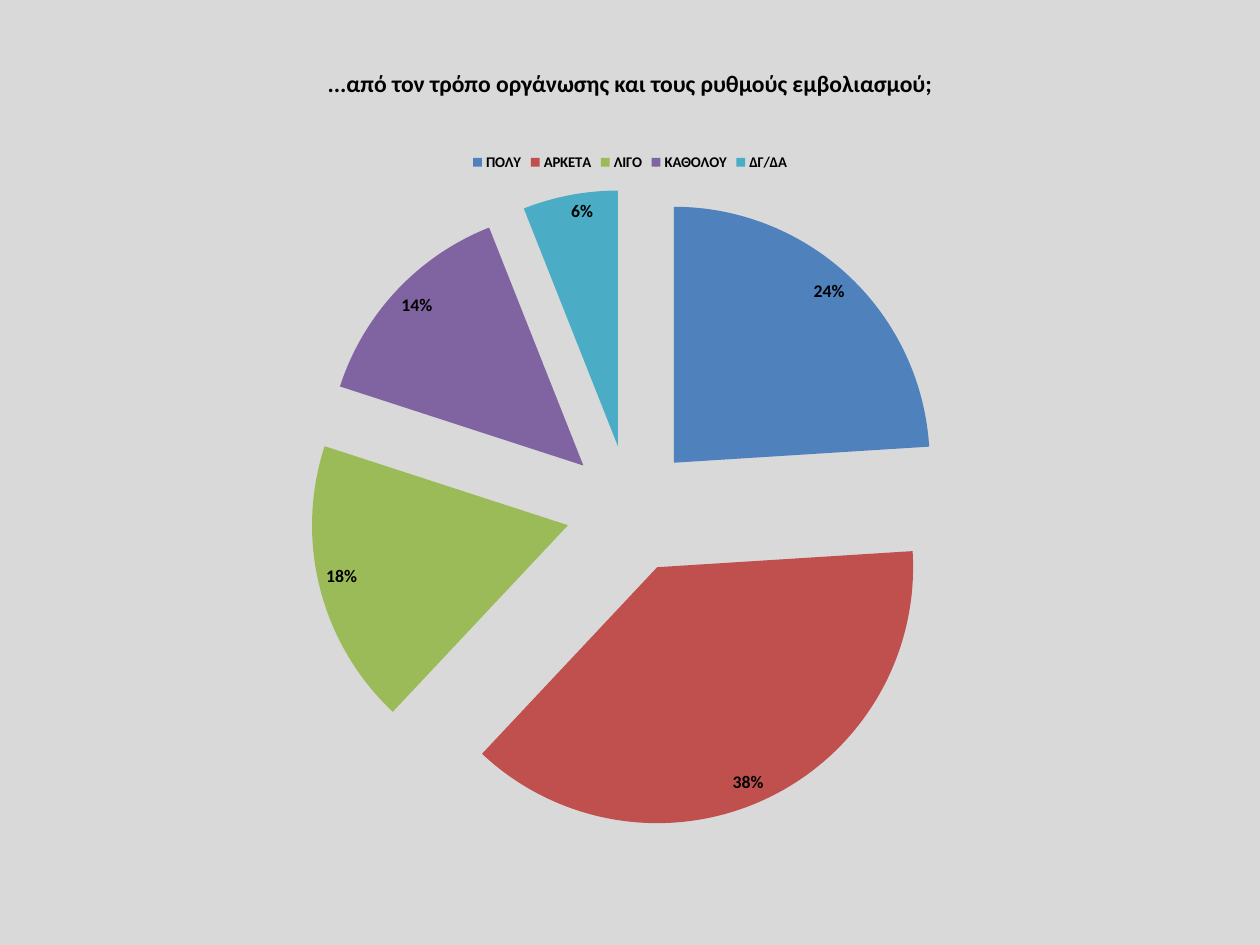
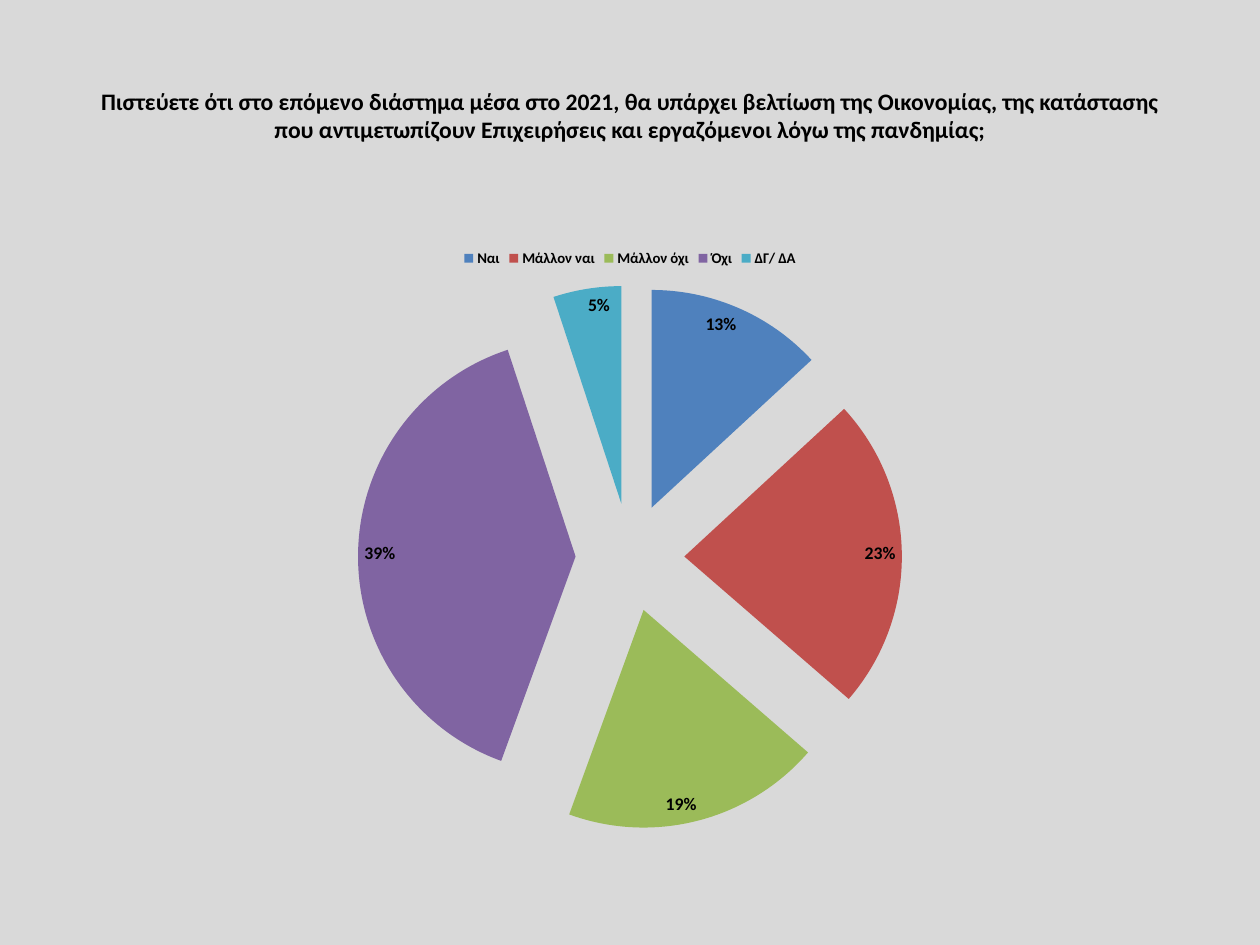
from pptx import Presentation
from pptx.chart.data import CategoryChartData
from pptx.dml.color import RGBColor
from pptx.enum.chart import XL_CHART_TYPE, XL_LABEL_POSITION, XL_LEGEND_POSITION
from pptx.enum.text import MSO_ANCHOR, PP_ALIGN
from pptx.oxml import parse_xml
from pptx.oxml.ns import nsdecls
from pptx.util import Emu, Pt

PIE = XL_CHART_TYPE.PIE
LEGEND_TOP = XL_LEGEND_POSITION.TOP
INSIDE_END = XL_LABEL_POSITION.INSIDE_END
MIDDLE = MSO_ANCHOR.MIDDLE
CENTER = PP_ALIGN.CENTER

EMU_PER_PX = 8594
SLIDE_WIDTH, SLIDE_HEIGHT = 1260, 945
TITLE_LEFT, TITLE_TOP = 86, 50
CHART_LEFT, CHART_BOTTOM = 63, 844
TITLE_CHART_GAP = 26

FONT = "Calibri"
BACKGROUND = "D9D9D9"
TEXT_COLOR = "000000"
SLICE_COLORS = ["4F81BD", "C0504D", "9BBB59", "8064A2", "4BACC6"]
EXPLOSION = 25

QUESTIONS = [
    {
        "title": "...από τον τρόπο οργάνωσης και τους ρυθμούς εμβολιασμού;",
        "title_height": 66,
        "answers": {"ΠΟΛΥ": 24, "ΑΡΚΕΤΑ": 38, "ΛΙΓΟ": 18, "ΚΑΘΟΛΟΥ": 14, "ΔΓ/ΔΑ": 6},
    },
    {
        "title": "Πιστεύετε ότι στο επόμενο διάστημα μέσα στο 2021, θα υπάρχει "
                 "βελτίωση της Οικονομίας, της κατάστασης που αντιμετωπίζουν "
                 "Επιχειρήσεις και εργαζόμενοι λόγω της πανδημίας;",
        "title_height": 130,
        "answers": {"Ναι": 13, "Μάλλον ναι": 23, "Μάλλον όχι": 19, "Όχι": 39, "ΔΓ/ ΔΑ": 5},
    },
]


def px(length):
    return Emu(length * EMU_PER_PX)


def color(value):
    return RGBColor.from_string(value)


def style_font(font, size, bold):
    font.name = FONT
    font.size = Pt(size)
    font.bold = bold
    font.color.rgb = color(TEXT_COLOR)


def add_title(slide, text, box):
    shape = slide.shapes.add_textbox(*map(px, box))
    text_frame = shape.text_frame
    text_frame.word_wrap = True
    text_frame.vertical_anchor = MIDDLE
    text_frame.margin_left = text_frame.margin_right = px(13)
    text_frame.margin_top = text_frame.margin_bottom = px(6)
    text_frame.text = text
    paragraph = text_frame.paragraphs[0]
    paragraph.alignment = CENTER
    style_font(paragraph.runs[0].font, 16, True)


def explode(series):
    explosion = parse_xml(f'<c:explosion {nsdecls("c")} val="{EXPLOSION}"/>')
    series._element.tx.addnext(explosion)


def add_pie(slide, answers, box):
    data = CategoryChartData()
    data.categories = list(answers)
    data.add_series("Series 1", list(answers.values()))
    chart = slide.shapes.add_chart(PIE, *map(px, box), data).chart
    chart.has_title = False
    style_font(chart.font, 10, False)

    chart.has_legend = True
    chart.legend.position = LEGEND_TOP
    chart.legend.include_in_layout = False
    style_font(chart.legend.font, 10, True)

    plot = chart.plots[0]
    plot.vary_by_categories = True
    series = plot.series[0]
    for index, slice_color in enumerate(SLICE_COLORS):
        slice_format = series.points[index].format
        slice_format.fill.solid()
        slice_format.fill.fore_color.rgb = color(slice_color)
        slice_format.line.fill.background()
    explode(series)

    labels = series.data_labels
    labels.show_value = False
    labels.show_percentage = True
    labels.number_format = "0%"
    labels.number_format_is_linked = False
    labels.position = INSIDE_END
    style_font(labels.font, 12, True)


def add_question_slide(presentation, title, title_height, answers):
    slide = presentation.slides.add_slide(presentation.slide_layouts[6])
    title_width = SLIDE_WIDTH - 2 * TITLE_LEFT
    add_title(slide, title, (TITLE_LEFT, TITLE_TOP, title_width, title_height))
    chart_top = TITLE_TOP + title_height + TITLE_CHART_GAP
    if title_height > 100:
        chart_top += TITLE_CHART_GAP + 6
    chart_width = SLIDE_WIDTH - 2 * CHART_LEFT
    add_pie(slide, answers, (CHART_LEFT, chart_top, chart_width, CHART_BOTTOM - chart_top))


def main():
    presentation = Presentation()
    presentation.slide_width = px(SLIDE_WIDTH)
    presentation.slide_height = px(SLIDE_HEIGHT)
    background = presentation.slide_master.background.fill
    background.solid()
    background.fore_color.rgb = color(BACKGROUND)
    for question in QUESTIONS:
        add_question_slide(presentation, **question)
    presentation.save("out.pptx")


if __name__ == "__main__":
    main()
